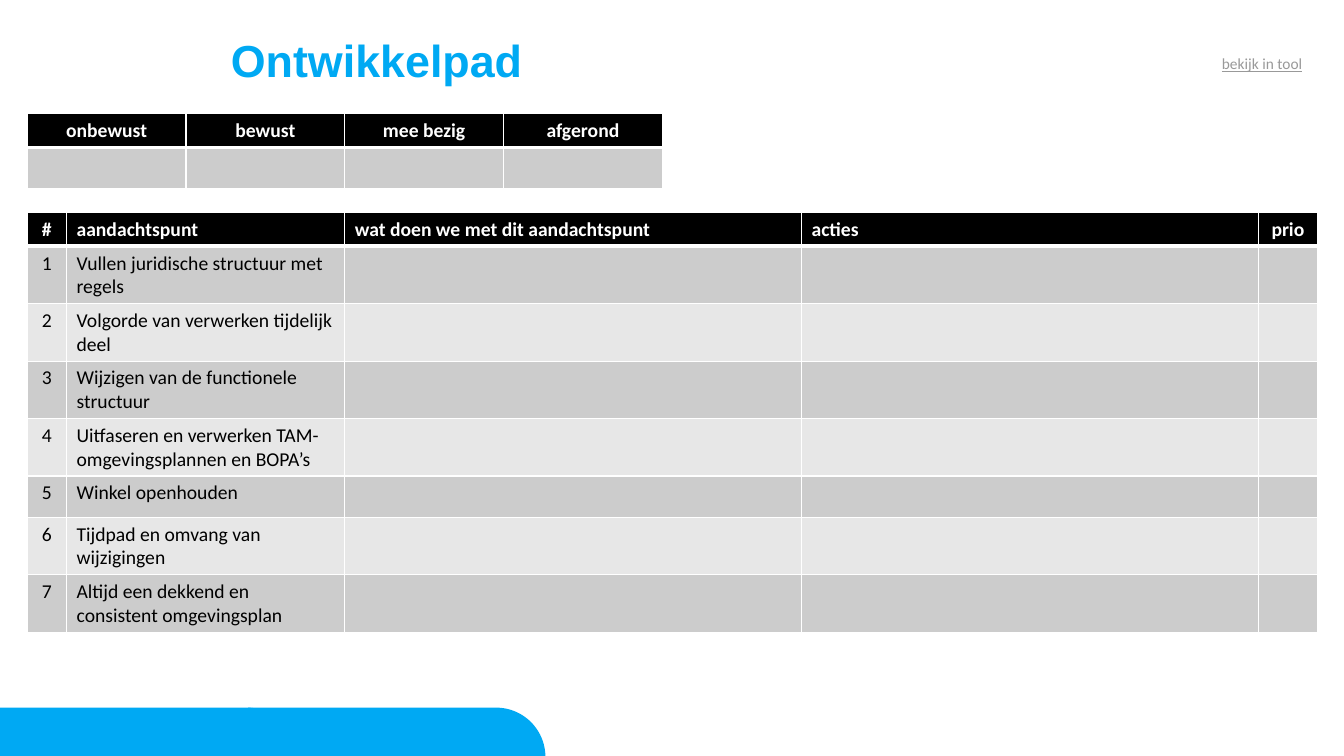
import math

import pptx
import pptx.dml.color
import pptx.enum.text
import pptx.oxml
import pptx.oxml.ns
import pptx.util

Inches = pptx.util.Inches
Pt = pptx.util.Pt
CENTER = pptx.enum.text.PP_ALIGN.CENTER
LEFT = pptx.enum.text.PP_ALIGN.LEFT

COLORS = {
    "blue": "00A9F3",
    "black": "000000",
    "white": "FFFFFF",
    "dark_band": "CCCCCC",
    "light_band": "E7E7E7",
    "link_grey": "999999",
}

STAGES = ["onbewust", "bewust", "mee bezig", "afgerond"]
HEADINGS = ["#", "aandachtspunt", "wat doen we met dit aandachtspunt", "acties", "prio"]
POINTS = [
    "Vullen juridische structuur met regels",
    "Volgorde van verwerken tijdelijk deel",
    "Wijzigen van de functionele structuur",
    "Uitfaseren en verwerken TAM-omgevingsplannen en BOPA’s",
    "Winkel openhouden",
    "Tijdpad en omvang van wijzigingen",
    "Altijd een dekkend en consistent omgevingsplan",
]


def rgb(name):
    return pptx.dml.color.RGBColor.from_string(COLORS[name])


def add_run(paragraph, text, size, color, font="Calibri", bold=False, underline=False):
    run = paragraph.add_run()
    run.text = text
    run.font.name = font
    run.font.size = Pt(size)
    run.font.bold = bold
    run.font.underline = underline
    run.font.color.rgb = rgb(color)


def add_label(slide, left, top, width, height, inset=None):
    """Add a text box and return its frame."""
    box = slide.shapes.add_textbox(Inches(left), Inches(top), Inches(width), Inches(height))
    frame = box.text_frame
    frame.word_wrap = True
    if inset is not None:
        frame.margin_left = frame.margin_right = Inches(inset)
        frame.margin_top = frame.margin_bottom = Inches(inset)
    return frame


def add_footer_tab(slide, left):
    """Blue bar with a quarter-round top right corner."""
    top, width, radius = 7.02, 2.95, 0.49
    bottom, center = top + radius, left + width - radius
    angles = [math.radians(90 - 3 * step) for step in range(31)]
    arc = [(center + radius * math.cos(a), bottom - radius * math.sin(a)) for a in angles]
    outline = slide.shapes.build_freeform(Inches(left), Inches(bottom))
    corners = [(left, top)] + arc
    outline.add_line_segments([(Inches(x), Inches(y)) for x, y in corners], close=True)
    tab = outline.convert_to_shape()
    tab.shadow.inherit = False
    tab.fill.solid()
    tab.fill.fore_color.rgb = rgb("blue")
    tab.line.fill.background()


def set_borders(cell, bottom_width):
    """White cell borders; they must precede the fill in the cell properties."""
    properties = cell._tc.get_or_add_tcPr()
    for side, width in (("lnL", 1), ("lnR", 1), ("lnT", 1), ("lnB", bottom_width)):
        properties.append(pptx.oxml.parse_xml(
            f'<a:{side} {pptx.oxml.ns.nsdecls("a")} w="{Pt(width)}"><a:solidFill>'
            f'<a:srgbClr val="{COLORS["white"]}"/></a:solidFill></a:{side}>'))


def add_banded_table(slide, left, top, widths, heights, rows, centered):
    """Black header row, then alternating grey bands."""
    frame = slide.shapes.add_table(len(rows), len(widths), Inches(left), Inches(top),
                                   Inches(sum(widths)), Inches(sum(heights)))
    table = frame.table
    for column, width in zip(table.columns, widths):
        column.width = Inches(width)
    for r, (texts, height) in enumerate(zip(rows, heights)):
        table.rows[r].height = Inches(height)
        header = r == 0
        band = "black" if header else ("dark_band" if r % 2 else "light_band")
        for c, text in enumerate(texts):
            cell = table.cell(r, c)
            set_borders(cell, 3 if header else 1)
            cell.fill.solid()
            cell.fill.fore_color.rgb = rgb(band)
            paragraph = cell.text_frame.paragraphs[0]
            paragraph.alignment = CENTER if c in centered else LEFT
            if text:
                add_run(paragraph, text, 14, "white" if header else "black", bold=header)


def main():
    deck = pptx.Presentation()
    deck.slide_width = Inches(13.33)
    deck.slide_height = Inches(7.5)
    slide = deck.slides.add_slide(deck.slide_layouts[6])

    # Footer bar
    for left in (-0.01, 2.46):
        add_footer_tab(slide, left)

    # Title
    title = add_label(slide, 2.29, 0.34, 4.66, 0.57, inset=0)
    title.vertical_anchor = pptx.enum.text.MSO_ANCHOR.MIDDLE
    title.paragraphs[0].line_spacing = 0.9
    add_run(title.paragraphs[0], "Ontwikkelpad", 32, "blue", font="Arial", bold=True)

    # Points of attention
    point_rows = [[str(n), point, "", "", ""] for n, point in enumerate(POINTS, 1)]
    point_heights = [0.41 if point == "Winkel openhouden" else 0.57 for point in POINTS]
    add_banded_table(slide, 0.27, 2.11, [0.39, 2.76, 4.53, 4.53, 0.59],
                     [0.33] + point_heights, [HEADINGS] + point_rows, centered={0, 4})

    # Stages
    add_banded_table(slide, 0.27, 1.13, [1.575] * len(STAGES), [0.33, 0.41],
                     [STAGES, [""] * len(STAGES)], centered=set(range(len(STAGES))))

    # Tool reference
    tool = add_label(slide, 12.02, 0.49, 1.04, 0.29)
    add_run(tool.paragraphs[0], "bekijk in tool", 11, "link_grey", underline=True)

    deck.save("out.pptx")


if __name__ == "__main__":
    main()
